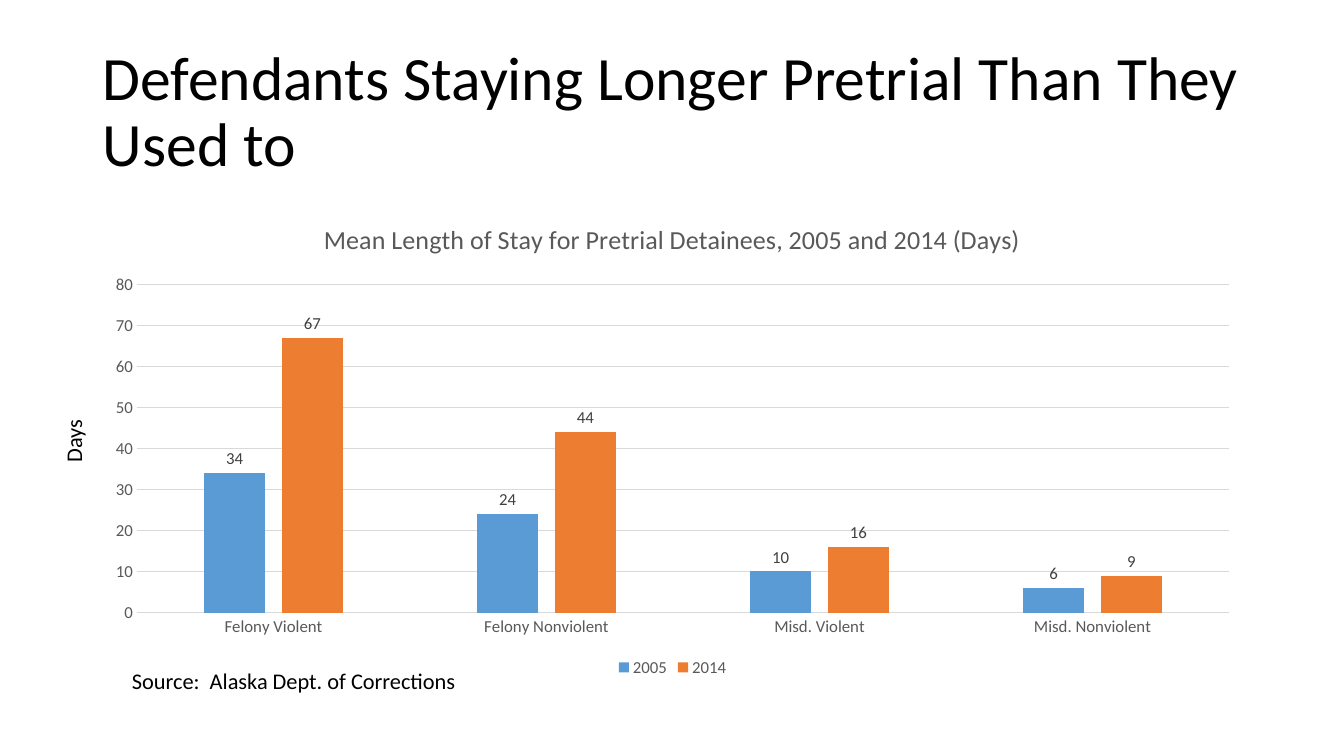
from pptx import Presentation
from pptx.chart.data import CategoryChartData
from pptx.dml.color import RGBColor
from pptx.enum.chart import (XL_CHART_TYPE, XL_LABEL_POSITION, XL_LEGEND_POSITION,
                             XL_TICK_MARK)
from pptx.enum.text import MSO_ANCHOR, MSO_AUTO_SIZE, PP_ALIGN
from pptx.util import Inches, Pt

FONT = "Calibri"
COLORS = {"text": "000000", "muted": "595959", "label": "404040", "grid": "D9D9D9",
          "2005": "5B9BD5", "2014": "ED7D31"}

TITLE = "Defendants Staying Longer Pretrial Than They Used to"
CHART_TITLE = "Mean Length of Stay for Pretrial Detainees, 2005 and 2014 (Days)"
CATEGORIES = ["Felony Violent", "Felony Nonviolent", "Misd. Violent", "Misd. Nonviolent"]
STAYS = {"2005": [34, 24, 10, 6], "2014": [67, 44, 16, 9]}
SOURCE = "Source:  Alaska Dept. of Corrections"
AXIS_NAME = "Days"


def rgb(name):
    return RGBColor.from_string(COLORS[name])


def set_font(font, size, color):
    font.name, font.size, font.bold = FONT, Pt(size), False
    font.color.rgb = rgb(color)


def write(tf, text, size=16, color="text", align=PP_ALIGN.LEFT, spacing=None):
    p = tf.paragraphs[0]
    p.alignment = align
    p.line_spacing = spacing
    r = p.add_run()
    r.text = text
    set_font(r.font, size, color)


def place(shape, *box):
    shape.left, shape.top, shape.width, shape.height = map(Inches, box)


def add_caption(s, text, box, rotation=0, align=PP_ALIGN.LEFT):
    tb = s.shapes.add_textbox(*map(Inches, box))
    tb.rotation = rotation
    tb.text_frame.word_wrap = True
    tb.text_frame.auto_size = MSO_AUTO_SIZE.SHAPE_TO_FIT_TEXT
    write(tb.text_frame, text, align=align)


def style_axis(axis):
    axis.major_tick_mark = axis.minor_tick_mark = XL_TICK_MARK.NONE
    set_font(axis.tick_labels.font, 12, "muted")


def style_line(line):
    line.color.rgb = rgb("grid")
    line.width = Pt(0.75)


def add_stay_chart(s):
    data = CategoryChartData()
    data.categories = CATEGORIES
    for year, days in STAYS.items():
        data.add_series(year, days)
    box = map(Inches, (0.92, 2, 11.5, 4.76))
    chart = s.shapes.add_chart(XL_CHART_TYPE.COLUMN_CLUSTERED, *box, data).chart
    set_font(chart.font, 10, "text")
    chart.has_title = True
    write(chart.chart_title.text_frame, CHART_TITLE, 18.6, "muted", PP_ALIGN.CENTER)
    chart.chart_title.include_in_layout = False

    chart.has_legend = True
    chart.legend.position = XL_LEGEND_POSITION.BOTTOM
    chart.legend.include_in_layout = False
    set_font(chart.legend.font, 12, "muted")

    style_axis(chart.category_axis)
    style_line(chart.category_axis.format.line)
    days_axis = chart.value_axis
    style_axis(days_axis)
    days_axis.format.line.fill.background()
    days_axis.minimum_scale, days_axis.maximum_scale, days_axis.major_unit = 0, 80, 10
    style_line(days_axis.major_gridlines.format.line)

    plot = chart.plots[0]
    plot.vary_by_categories = False
    plot.gap_width, plot.overlap = 219, -27
    for series in plot.series:
        series.format.fill.solid()
        series.format.fill.fore_color.rgb = rgb(series.name)
        labels = series.data_labels
        labels.show_value = True
        labels.position = XL_LABEL_POSITION.OUTSIDE_END
        set_font(labels.font, 12, "label")


def main():
    prs = Presentation()
    prs.slide_width, prs.slide_height = Inches(13.33), Inches(7.5)
    s = prs.slides.add_slide(prs.slide_layouts[5])
    title = s.shapes.title
    place(title, 0.92, 0.4, 11.5, 1.45)
    title.text_frame.vertical_anchor = MSO_ANCHOR.MIDDLE
    title.text_frame.auto_size = MSO_AUTO_SIZE.NONE
    write(title.text_frame, TITLE, 44, spacing=0.9)
    add_stay_chart(s)
    add_caption(s, SOURCE, (1.21, 6.57, 3.58, 0.37))
    add_caption(s, AXIS_NAME, (0.13, 4.19, 1.2, 0.37), 270, PP_ALIGN.CENTER)
    prs.save("out.pptx")


if __name__ == "__main__":
    main()
